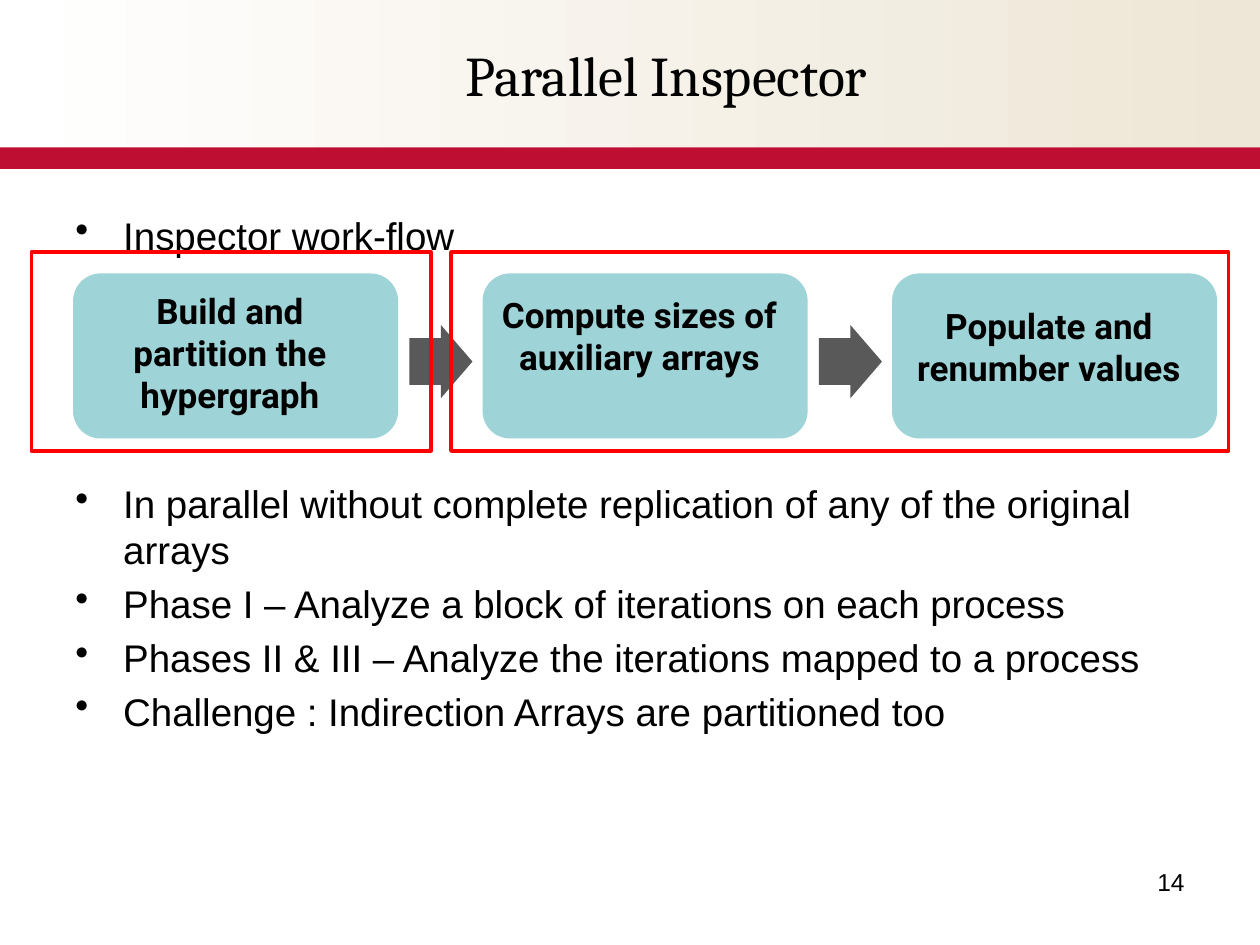
from dataclasses import dataclass

from lxml.etree import SubElement
from pptx import Presentation
from pptx.dml.color import RGBColor
from pptx.enum.shapes import MSO_SHAPE
from pptx.enum.text import MSO_ANCHOR, PP_ALIGN
from pptx.oxml.ns import qn
from pptx.util import Inches, Pt


@dataclass(frozen=True)
class Theme:
    ink: str = "000000"
    red: str = "BE0F33"
    frame: str = "FF0000"
    step: str = "9ED3D7"
    arrow: str = "595959"
    fade: tuple = ("FFFFFF", "EEE6D6")
    head: int = 32
    body: int = 22
    label: int = 20
    note: int = 14


THEME = Theme()
WIDE, HIGH = 10, 7.5
TITLE = "Parallel Inspector"
PAGE = "14"
STEPS = [
    ("Build and partition the hypergraph", 0.08),
    ("Compute sizes of auxiliary arrays", 0.11),
    ("Populate and renumber values", 0.2),
]
LISTS = [
    (1.63, 0.45, ["Inspector work-flow"]),
    (3.76, 2.94, [
        "In parallel without complete replication of any of the original arrays",
        "Phase I – Analyze a block of iterations on each process",
        "Phases II & III – Analyze the iterations mapped to a process",
        "Challenge : Indirection Arrays are partitioned too",
    ]),
]
FRAMES = [(0.25, 3.17), (3.58, 6.17)]
LEFT, TOP, PITCH = 0.58, 2.17, 3.25
STEP_W, STEP_H, LABEL_W = 2.58, 1.31, 2.49
ARROW_W, ARROW_H, GAP = 0.5, 0.58, 0.09


def rgb(code):
    return RGBColor.from_string(code)


def inch(*nums):
    return [Inches(n) for n in nums]


def write(shape, lines, size, font="Arial", bold=False, align=PP_ALIGN.LEFT,
          anchor=MSO_ANCHOR.TOP, bullet=False):
    """Fill a shape with formatted paragraphs."""
    frame = shape.text_frame
    frame.word_wrap = True
    frame.vertical_anchor = anchor
    frame.text = "\n".join(lines)
    for i, para in enumerate(frame.paragraphs):
        if bullet:
            props = para._p.get_or_add_pPr()
            props.set("marL", str(Inches(0.38)))
            props.set("indent", str(Inches(-0.38)))
            SubElement(props, qn("a:buChar"), char="•")
        para.alignment = align
        para.space_before = Pt(size * 0.2 if i else 0)
        para.font.size = Pt(size)
        para.font.name = font
        para.font.bold = bold
        para.font.color.rgb = rgb(THEME.ink)


def draw(slide, kind, box, fill=None, line=None):
    shape = slide.shapes.add_shape(kind, *inch(*box))
    shape.shadow.inherit = False
    if fill:
        shape.fill.solid()
        shape.fill.fore_color.rgb = rgb(fill)
    else:
        shape.fill.background()
    if line:
        shape.line.color.rgb = rgb(line)
        shape.line.width = Pt(2)
    else:
        shape.line.fill.background()
    return shape


def banner(slide):
    title = slide.shapes.title
    fade = draw(slide, MSO_SHAPE.RECTANGLE, (0, 0, WIDE, 1.17))
    fade.fill.gradient()
    fade.fill.gradient_angle = 0
    for stop, code in zip(fade.fill.gradient_stops, THEME.fade):
        stop.color.rgb = rgb(code)
    bar = draw(slide, MSO_SHAPE.RECTANGLE, (0, 1.17, WIDE, 0.17), THEME.red)
    for shape in (fade, bar):
        title.element.addprevious(shape.element)
    title.left, title.top, title.width, title.height = inch(1.08, 0.25, 8.42, 0.67)
    write(title, [TITLE], THEME.head, font="Cambria", align=PP_ALIGN.CENTER,
          anchor=MSO_ANCHOR.MIDDLE)


def flow(slide):
    for i, (text, drop) in enumerate(STEPS):
        x = LEFT + i * PITCH
        draw(slide, MSO_SHAPE.ROUNDED_RECTANGLE, (x, TOP, STEP_W, STEP_H), THEME.step)
        label = slide.shapes.add_textbox(
            *inch(x, TOP + drop, LABEL_W, STEP_H - 2 * drop))
        write(label, [text], THEME.label, font="Roboto", bold=True,
              align=PP_ALIGN.CENTER)
        if i < len(STEPS) - 1:
            arrow = draw(slide, MSO_SHAPE.RIGHT_ARROW,
                         (x + STEP_W + GAP, 2.58, ARROW_W, ARROW_H), THEME.arrow)
            arrow.adjustments[0] = 0.64
    for x, width in FRAMES:
        draw(slide, MSO_SHAPE.RECTANGLE, (x, 2, width, 1.58), line=THEME.frame)


def main():
    deck = Presentation()
    deck.slide_width, deck.slide_height = inch(WIDE, HIGH)
    slide = deck.slides.add_slide(deck.slide_layouts[5])
    banner(slide)
    for top, height, lines in LISTS:
        box = slide.shapes.add_textbox(*inch(0.5, top, 9, height))
        write(box, lines, THEME.body, bullet=True)
    page = slide.shapes.add_textbox(*inch(7.17, 6.83, 2.33, 0.52))
    write(page, [PAGE], THEME.note, align=PP_ALIGN.RIGHT)
    flow(slide)
    deck.save("out.pptx")


if __name__ == "__main__":
    main()
